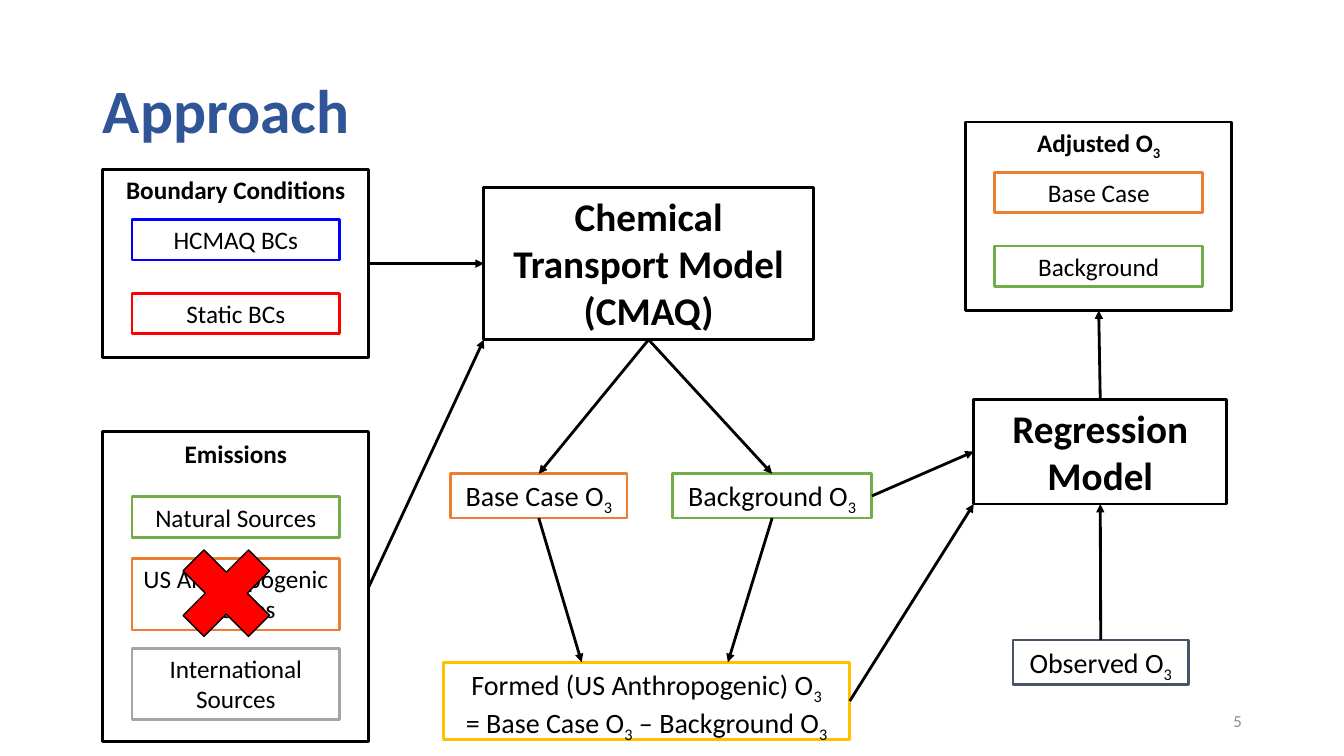
from lxml.etree import SubElement
from pptx import Presentation
from pptx.dml.color import RGBColor
from pptx.enum.shapes import MSO_CONNECTOR, MSO_SHAPE
from pptx.enum.text import MSO_ANCHOR, MSO_AUTO_SIZE, PP_ALIGN
from pptx.oxml.ns import qn
from pptx.util import Inches, Pt

CELL = Inches(0.1)  # side of one square grid cell
COLUMNS, ROWS = 133.33, 75
PANEL_WIDTH, LABEL_WIDTH, LABEL_HEIGHT = 26.4, 20.6, 4
FONT = "Calibri"
COLOURS = {
    "title": "2F5597", "black": "000000", "number": "8C8C8C",
    "blue": "0000FF", "red": "FF0000", "green": "70AD47", "orange": "ED7D31",
    "grey": "A5A5A5", "gold": "FFC000", "slate": "44546A",
}


def colour(name):
    return RGBColor.from_string(COLOURS[name])


def cells(*counts):
    return [round(count * CELL) for count in counts]


def write(box, *lines, size=18, bold=False, ink="black",
          align=PP_ALIGN.CENTER, anchor=MSO_ANCHOR.TOP, grow=True):
    """Fill a box with lines; every second part between bars is a subscript."""
    frame = box.text_frame
    frame.word_wrap = True
    frame.vertical_anchor = anchor
    frame.auto_size = MSO_AUTO_SIZE.SHAPE_TO_FIT_TEXT if grow else MSO_AUTO_SIZE.NONE
    for index, line in enumerate(lines):
        para = frame.add_paragraph() if index else frame.paragraphs[0]
        para.alignment = align
        for position, part in enumerate(line.split("|")):
            if not part:
                continue
            span = para.add_run()
            span.text = part
            font = span.font
            font.name, font.size, font.bold = FONT, Pt(size), bold
            font.color.rgb = colour(ink)
            if position % 2:
                font._element.set("baseline", "-25000")


def shape(page, kind, place, line="black", width=2, fill=None):
    item = page.shapes.add_shape(kind, *cells(*place))
    item.shadow.inherit = False
    item.line.color.rgb = colour(line)
    item.line.width = Pt(width)
    if fill:
        item.fill.solid()
        item.fill.fore_color.rgb = colour(fill)
    else:
        item.fill.background()
    return item


def framed(page, place, *lines, line="black", **style):
    box = shape(page, MSO_SHAPE.RECTANGLE, place, line)
    if lines:
        write(box, *lines, **style)
    return box


def text(page, place, *lines, **style):
    write(page.shapes.add_textbox(*cells(*place)), *lines, **style)


def panel(page, left, top, height, heading, labels, drop=0):
    """A frame with a bold heading and labels given as (text, line, offset, height)."""
    text(page, (left, top + drop, PANEL_WIDTH, LABEL_HEIGHT), heading, bold=True)
    inset = (PANEL_WIDTH - LABEL_WIDTH) / 2
    for label, line, offset, label_height in labels:
        framed(page, (left + inset, top + offset, LABEL_WIDTH, label_height),
               label, line=line)
    return framed(page, (left, top, PANEL_WIDTH, height))


def spot(box, across, down):
    return (round(box.left + across * box.width), round(box.top + down * box.height))


def arrow(page, start, end):
    link = page.shapes.add_connector(MSO_CONNECTOR.STRAIGHT, *start, *end)
    link.line.color.rgb = colour("black")
    link.line.width = Pt(2)
    SubElement(link.line._get_or_add_ln(), qn("a:tailEnd"), type="triangle")
    SubElement(link._element.spPr, qn("a:effectLst"))


def set_title(page, words):
    title = page.shapes.title
    title.left, title.top, title.width, title.height = cells(9.2, 4, 115, 14.5)
    write(title, words, size=44, bold=True, ink="title",
          align=PP_ALIGN.LEFT, anchor=MSO_ANCHOR.MIDDLE, grow=False)
    title.text_frame.paragraphs[0].line_spacing = 0.9


def main():
    deck = Presentation()
    deck.slide_width, deck.slide_height = cells(COLUMNS, ROWS)
    page = deck.slides.add_slide(deck.slide_layouts[5])
    set_title(page, "Approach")
    text(page, (94.2, 69.5, 30, 4), "5", size=12, ink="number",
         align=PP_ALIGN.RIGHT, anchor=MSO_ANCHOR.MIDDLE, grow=False)

    # Inputs and adjusted result
    boundary = panel(page, 10.2, 16.8, 18.7, "Boundary Conditions", [
        ("HCMAQ BCs", "blue", 5, LABEL_HEIGHT),
        ("Static BCs", "red", 12.3, LABEL_HEIGHT)])
    emissions = panel(page, 10.2, 42.8, 30.8, "Emissions", [
        ("Natural Sources", "green", 6.5, LABEL_HEIGHT),
        ("US Anthropogenic Sources", "orange", 12.6, 7.1),
        ("International Sources", "grey", 21.5, 7.1)], drop=0.2)
    adjusted = panel(page, 95.8, 12.1, 18.7, "Adjusted O|3", [
        ("Base Case", "orange", 5, LABEL_HEIGHT),
        ("Background", "green", 12.3, LABEL_HEIGHT)])
    shape(page, MSO_SHAPE.MATH_MULTIPLY, (16.2, 52.6, 12.5, 12.5), width=1, fill="red")

    # Models
    transport = framed(page, (48, 18.6, 32.7, 15.1), "Chemical Transport Model",
                       "(CMAQ)", size=28, bold=True)
    regression = framed(page, (96.6, 39.6, 25.1, 10.4), "Regression Model",
                        size=28, bold=True)

    # Ozone quantities
    base = framed(page, (44.7, 47, 17.5, 4.4), "Base Case O|3", line="orange", size=20)
    background = framed(page, (66.7, 47, 19.8, 4.4), "Background O|3",
                        line="green", size=20)
    formed = framed(page, (44, 65.7, 40.3, 7.7), "Formed (US Anthropogenic) O|3",
                    "= Base Case O|3| – Background O|3", line="gold", size=20)
    observed = framed(page, (100.5, 63.5, 17.4, 4.4), "Observed O|3",
                      line="slate", size=20)

    # Arrows, each end given as shares of its box's width and height
    top, bottom, left, right = (0.5, 0), (0.5, 1), (0, 0.5), (1, 0.5)
    corner = (0, 1)
    for source, leave, target, enter in [
        (boundary, right, transport, left),
        (emissions, right, transport, corner),
        (transport, bottom, base, top),
        (transport, bottom, background, top),
        (base, bottom, formed, (0.34, 0)),
        (background, bottom, formed, (0.7, 0)),
        (formed, right, regression, corner),
        (background, right, regression, left),
        (observed, top, regression, bottom),
        (regression, top, adjusted, bottom),
    ]:
        arrow(page, spot(source, *leave), spot(target, *enter))

    deck.save("out.pptx")


if __name__ == "__main__":
    main()
